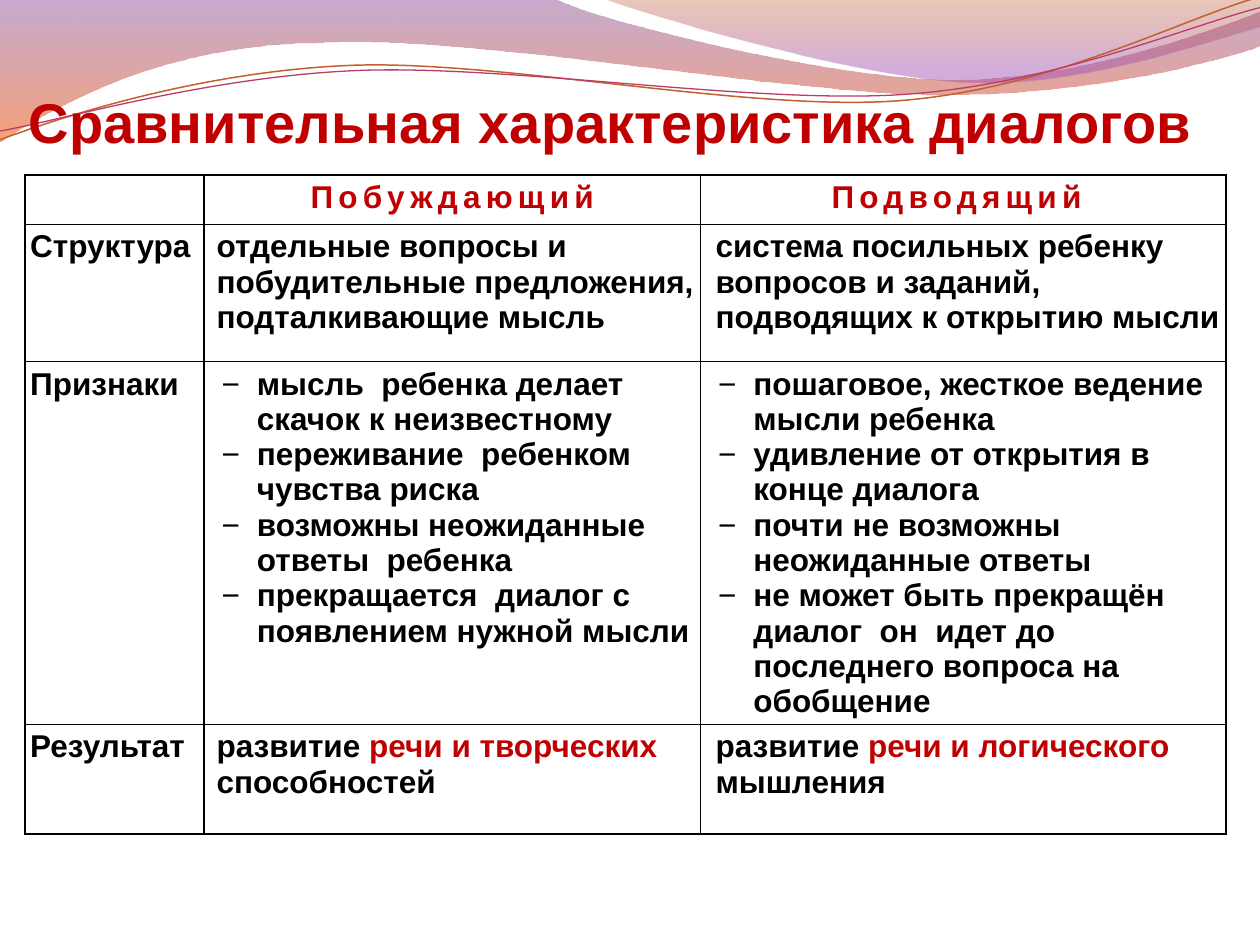
"""Build a slide comparing two kinds of dialogue in a table under a wavy banner."""
from math import cos, radians, sin
from lxml.etree import SubElement
from pptx import Presentation
from pptx.dml.color import RGBColor
from pptx.enum.text import MSO_ANCHOR as Anchor, MSO_AUTO_SIZE as AutoSize, PP_ALIGN as Align
from pptx.oxml import parse_xml
from pptx.oxml.ns import nsdecls, qn
from pptx.util import Inches, Pt

RED, BLACK, WHITE = "C00000", "000000", "FFFFFF"
TITLE = "Сравнительная характеристика диалогов"
HEADINGS = ["", "Побуждающий", "Подводящий"]
STRUCTURE = ["Структура",
             "отдельные вопросы и побудительные предложения, подталкивающие мысль",
             "система посильных ребенку вопросов и заданий, подводящих к открытию мысли"]
FEATURES = ["Признаки",
            ["мысль  ребенка делает скачок к неизвестному",
             "переживание  ребенком  чувства риска",
             "возможны неожиданные ответы  ребенка",
             "прекращается  диалог с появлением нужной мысли"],
            ["пошаговое, жесткое ведение мысли ребенка",
             "удивление от открытия в конце диалога",
             "почти не возможны неожиданные ответы",
             "не может быть прекращён  диалог  он  идет до последнего вопроса на обобщение"]]
RESULT = ["Результат",
          [("развитие ", BLACK), ("речи и творческих ", RED), ("способностей", BLACK)],
          [("развитие ", BLACK), ("речи и логического ", RED), ("мышления", BLACK)]]
ROWS = [HEADINGS, STRUCTURE, FEATURES, RESULT]
COLUMN_WIDTHS, ROW_HEIGHTS = [1.42, 3.94, 4.17], [0.39, 1.09, 2.82, 0.87]
TEXT_INDENTS = [0, 0.06, 0.08]

STRAND_TILT = -2.7
BANDS = [
    ((-0.01, -0.01, 10.02, 1.14),
     [(0, -0.01), (4.4, -0.01), (4.76, 0.17, 6.64, 0.63, 7.58, 0.63),
      (8.53, 0.63, 9.58, 0.26, 10, 0.09), (10.01, 0.36),
      (9.83, 0.44, 8.7, 0.76, 7.46, 0.75), (6.22, 0.75, 3.82, 0.28, 2.57, 0.34),
      (1.29, 0.35, 0.46, 0.83, -0.01, 1.13), (0, -0.01)],
     [(0, "834591", 45), (100, "F35307", 55)]),
    ((4.79, -0.01, 5.21, 0.7),
     [(4.79, -0.01), (5.09, 0.11, 6.82, 0.62, 7.69, 0.65),
      (8.56, 0.69, 9.61, 0.32, 10, 0.21), (10, 0), (4.79, -0.01)],
     [(0, "B74915", 30), (80, "A14BB4", 45)]),
]
STRANDS = [
    ((-0.02, 0.22, 10.02, 0.71),
     [(0, 1.11), (0.48, 0.93, 1.58, 0.57, 2.77, 0.52), (3.95, 0.47, 5.93, 0.89, 7.13, 0.8),
      (8.33, 0.71, 9.38, 0.15, 9.98, -0.02)], "C45F30", 0.85),
    ((-0.02, 0.3, 10.03, 0.58),
     [(0, 1.04), (0.47, 0.96, 1.64, 0.61, 2.83, 0.56), (4.03, 0.51, 5.97, 0.83, 7.17, 0.75),
      (8.36, 0.67, 9.41, 0.21, 10, 0.06)], "B83D68", 0.75),
]


def rgb(value):
    return RGBColor.from_string(value)


def apply(target, **values):
    for key, value in values.items():
        setattr(target, key, value)


def add_wave(slide, box, segments, closed, tilt=0):
    """Draw a freeform whose six-number segments are cubic curves."""
    left, top, width, height = box
    builder = slide.shapes.build_freeform(Inches(left), Inches(top))
    builder.add_line_segments([(Inches(left + width), Inches(top + height))], close=closed)
    wave = builder.convert_to_shape()
    wave.shadow.inherit = False
    wave.rotation = tilt % 360
    outline = wave.element.spPr.find(".//" + qn("a:path"))
    end = outline.find(qn("a:close"))
    for drawn in list(outline):
        outline.remove(drawn)
    turn = radians(-tilt)
    for number, segment in enumerate(segments):
        kind = "moveTo" if number == 0 else "lnTo" if len(segment) == 2 else "cubicBezTo"
        step = SubElement(outline, qn(f"a:{kind}"))
        for x, y in zip(segment[::2], segment[1::2]):
            dx, dy = x - left - width / 2, y - top - height / 2
            SubElement(step, qn("a:pt"),
                       x=str(Inches(width / 2 + dx * cos(turn) - dy * sin(turn))),
                       y=str(Inches(height / 2 + dx * sin(turn) + dy * cos(turn))))
    if end is not None:
        outline.append(end)
    return wave


def add_band(slide, box, segments, stops):
    band = add_wave(slide, box, segments, True)
    band.line.fill.background()
    stop_xml = "".join(
        f'<a:gs pos="{position * 1000}"><a:srgbClr val="{color}">'
        f'<a:alpha val="{opacity * 1000}"/></a:srgbClr></a:gs>'
        for position, color, opacity in stops)
    gradient = parse_xml(f'<a:gradFill {nsdecls("a")}><a:gsLst>{stop_xml}</a:gsLst>'
                         '<a:lin ang="5400000" scaled="0"/></a:gradFill>')
    band.element.spPr.find(qn("a:custGeom")).addnext(gradient)


def add_strand(slide, box, segments, color, width):
    strand = add_wave(slide, box, segments, False, STRAND_TILT)
    strand.fill.background()
    strand.line.color.rgb = rgb(color)
    strand.line.width = Pt(width)


def add_run(paragraph, text, color, size=18):
    run = paragraph.add_run()
    run.text = text
    apply(run.font, name="Arial", size=Pt(size), bold=True)
    run.font.color.rgb = rgb(color)
    return run


def indent(paragraph, left, first=0):
    properties = paragraph._p.get_or_add_pPr()
    properties.set("marL", str(Inches(left)))
    properties.set("indent", str(Inches(first)))
    return properties


def add_dash(paragraph):
    properties = indent(paragraph, 0.38, -0.28)
    SubElement(SubElement(properties, qn("a:buClr")), qn("a:srgbClr"), val=BLACK)
    SubElement(properties, qn("a:buFont"), typeface="Arial")
    SubElement(properties, qn("a:buChar"), char="−")
    tabs = SubElement(properties, qn("a:tabLst"))
    SubElement(tabs, qn("a:tab"), pos=str(Inches(0.18)), algn="l")


def style_cell(cell):
    apply(cell, vertical_anchor=Anchor.TOP,
          **{f"margin_{side}": Inches(0.04) for side in ("left", "right", "top", "bottom")})
    cell.fill.solid()
    cell.fill.fore_color.rgb = rgb(WHITE)
    properties = cell._tc.get_or_add_tcPr()
    for place, edge in enumerate("LRTB"):
        properties.insert(place, parse_xml(
            f'<a:ln{edge} {nsdecls("a")} w="12700"><a:solidFill>'
            f'<a:srgbClr val="{BLACK}"/></a:solidFill></a:ln{edge}>'))


def fill_cell(cell, content, row, column):
    frame = cell.text_frame
    paragraph = frame.paragraphs[0]
    if row == 0:
        if content:
            add_run(paragraph, content, RED).font._element.set("spc", "300")
            if column == 1:
                paragraph.alignment = Align.CENTER
            else:
                indent(paragraph, 1)
    elif isinstance(content, list) and isinstance(content[0], str):
        for number, item in enumerate(content):
            paragraph = frame.add_paragraph() if number else paragraph
            add_dash(paragraph)
            add_run(paragraph, item, BLACK)
    else:
        indent(paragraph, TEXT_INDENTS[column])
        if column == 0:
            paragraph.alignment = Align.JUSTIFY
        for text, color in [(content, BLACK)] if isinstance(content, str) else content:
            add_run(paragraph, text, color)


def add_comparison(slide):
    table = slide.shapes.add_table(
        len(ROWS), len(COLUMN_WIDTHS), Inches(0.2), Inches(1.39),
        Inches(sum(COLUMN_WIDTHS)), Inches(sum(ROW_HEIGHTS))).table
    apply(table, first_row=False, horz_banding=False)
    for column, width in zip(table.columns, COLUMN_WIDTHS):
        column.width = Inches(width)
    for r, (contents, height) in enumerate(zip(ROWS, ROW_HEIGHTS)):
        table.rows[r].height = Inches(height)
        for c, content in enumerate(contents):
            style_cell(table.cell(r, c))
            fill_cell(table.cell(r, c), content, r, c)


def set_title(slide):
    title = slide.shapes.title
    apply(title, left=Inches(0.2), top=Inches(0.13), width=Inches(9.29), height=Inches(1.1))
    apply(title.text_frame, auto_size=AutoSize.NONE, word_wrap=True,
          vertical_anchor=Anchor.BOTTOM, margin_left=0, margin_right=0,
          margin_top=Inches(0.05), margin_bottom=0)
    heading = title.text_frame.paragraphs[0]
    heading.alignment = Align.CENTER
    add_run(heading, TITLE, RED, 32)
    slide.shapes._spTree.append(title.element)


def main():
    deck = Presentation()
    apply(deck, slide_width=Inches(10), slide_height=Inches(7.5))
    slide = deck.slides.add_slide(deck.slide_layouts[5])
    for band in BANDS:
        add_band(slide, *band)
    for strand in STRANDS:
        add_strand(slide, *strand)
    set_title(slide)
    add_comparison(slide)
    deck.save("out.pptx")


if __name__ == "__main__":
    main()
